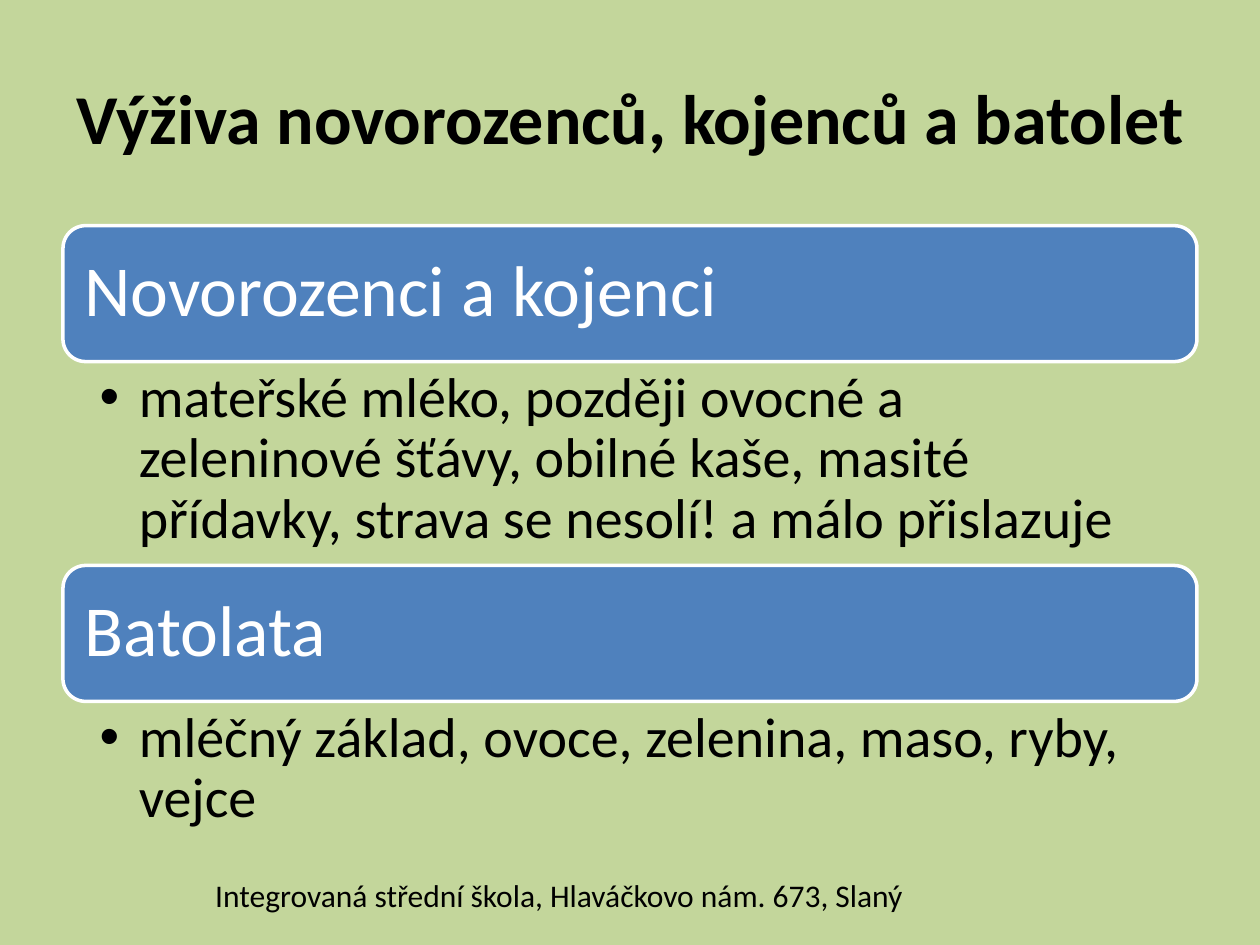
from lxml.etree import SubElement
from pptx import Presentation
from pptx.dml.color import RGBColor
from pptx.enum.shapes import MSO_SHAPE
from pptx.enum.text import MSO_ANCHOR, PP_ALIGN
from pptx.oxml.ns import qn
from pptx.util import Cm, Pt

COLORS = {"background": "C3D69B", "bar": "4F81BD", "light": "FFFFFF", "text": "000000"}
LEFT, WIDTH = Cm(1.27), Cm(22.86)
BAR_HEIGHT = Cm(2.74)

# Heading, diet, height of the diet text
GROUPS = [
    ("Novorozenci a kojenci",
     "mateřské mléko, později ovocné a zeleninové šťávy, obilné kaše, "
     "masité přídavky, strava se nesolí! a málo přislazuje", Cm(4.11)),
    ("Batolata", "mléčný základ, ovoce, zelenina, maso, ryby, vejce", Cm(2.77)),
]


def write(frame, text, size, color="text", bold=False):
    """Fill the frame with one formatted paragraph and return it."""
    frame.word_wrap = True
    frame.text = text
    paragraph = frame.paragraphs[0]
    font = paragraph.runs[0].font
    font.name, font.size, font.bold = "Calibri", Pt(size), bold
    font.color.rgb = RGBColor.from_string(COLORS[color])
    return paragraph


def set_insets(frame, left, top, right, bottom):
    frame.margin_left, frame.margin_top = Cm(left), Cm(top)
    frame.margin_right, frame.margin_bottom = Cm(right), Cm(bottom)


prs = Presentation()
prs.slide_width, prs.slide_height = Cm(25.4), Cm(19.05)
slide = prs.slides.add_slide(prs.slide_layouts[5])
slide.background.fill.solid()
slide.background.fill.fore_color.rgb = RGBColor.from_string(COLORS["background"])

title = slide.shapes.title
title.left, title.top, title.width, title.height = LEFT, Cm(0.76), WIDTH, Cm(3.18)
title.text_frame.vertical_anchor = MSO_ANCHOR.MIDDLE
write(title.text_frame, "Výživa novorozenců, kojenců a batolet", 40, bold=True).alignment = PP_ALIGN.CENTER

top = Cm(4.55)
for heading, diet, diet_height in GROUPS:
    bar = slide.shapes.add_shape(MSO_SHAPE.ROUNDED_RECTANGLE, LEFT, top, WIDTH, BAR_HEIGHT)
    bar.shadow.inherit = False
    bar.fill.solid()
    bar.fill.fore_color.rgb = RGBColor.from_string(COLORS["bar"])
    bar.line.color.rgb = RGBColor.from_string(COLORS["light"])
    bar.line.width = Pt(2)
    bar.text_frame.vertical_anchor = MSO_ANCHOR.MIDDLE
    set_insets(bar.text_frame, 0.3, 0.3, 0.3, 0.3)
    heading_line = write(bar.text_frame, heading, 41, "light")
    heading_line.alignment = PP_ALIGN.LEFT
    heading_line.line_spacing = 0.9
    top += BAR_HEIGHT

    diet_box = slide.shapes.add_textbox(LEFT, top, WIDTH, diet_height)
    set_insets(diet_box.text_frame, 0.74, 0.15, 0.81, 0.15)
    diet_line = write(diet_box.text_frame, diet, 32)
    diet_line.line_spacing = 0.9
    properties = diet_line._p.get_or_add_pPr()
    properties.set("marL", str(Cm(0.79)))
    properties.set("indent", str(-Cm(0.79)))
    SubElement(properties, qn("a:buFont"), typeface="Arial")
    SubElement(properties, qn("a:buChar"), char="•")
    top += diet_height

school = slide.shapes.add_textbox(Cm(4.09), Cm(17.53), Cm(18.8), Cm(1.02))
write(school.text_frame, "Integrovaná střední škola, Hlaváčkovo nám. 673, Slaný", 18)

prs.save("out.pptx")
